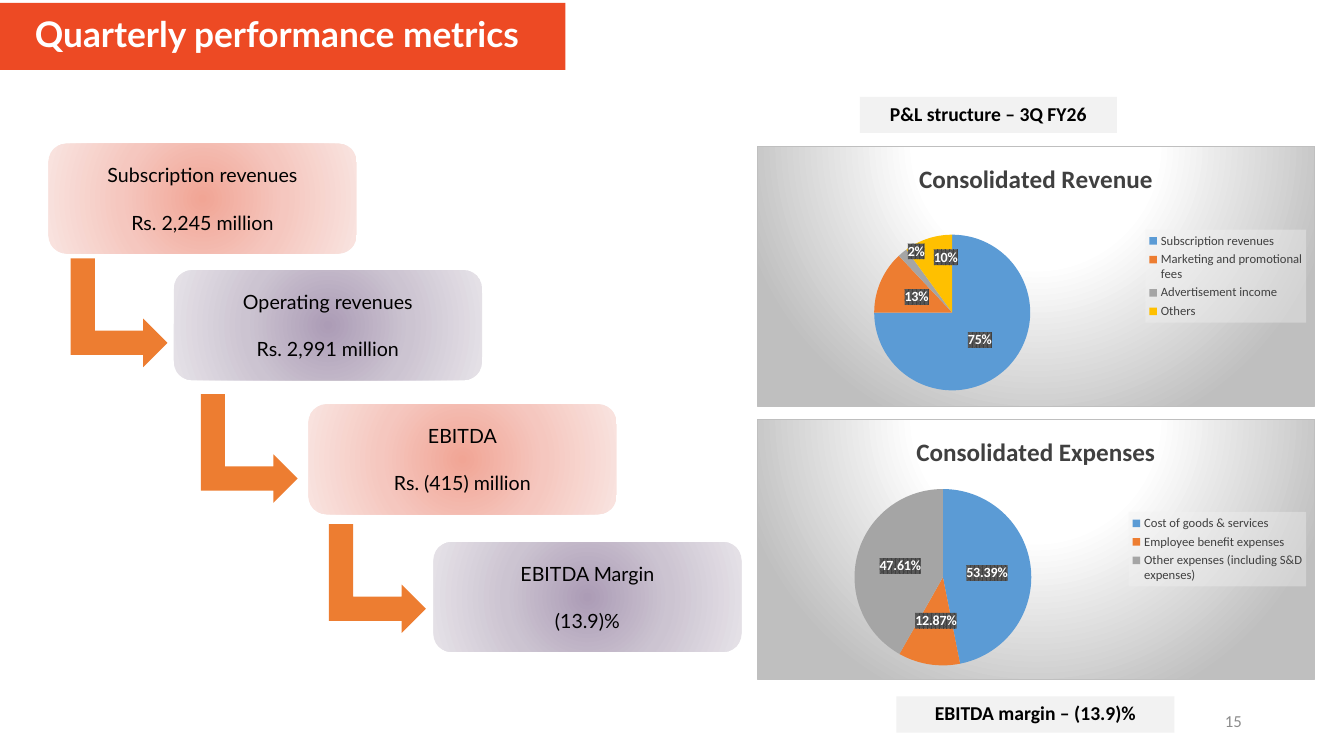
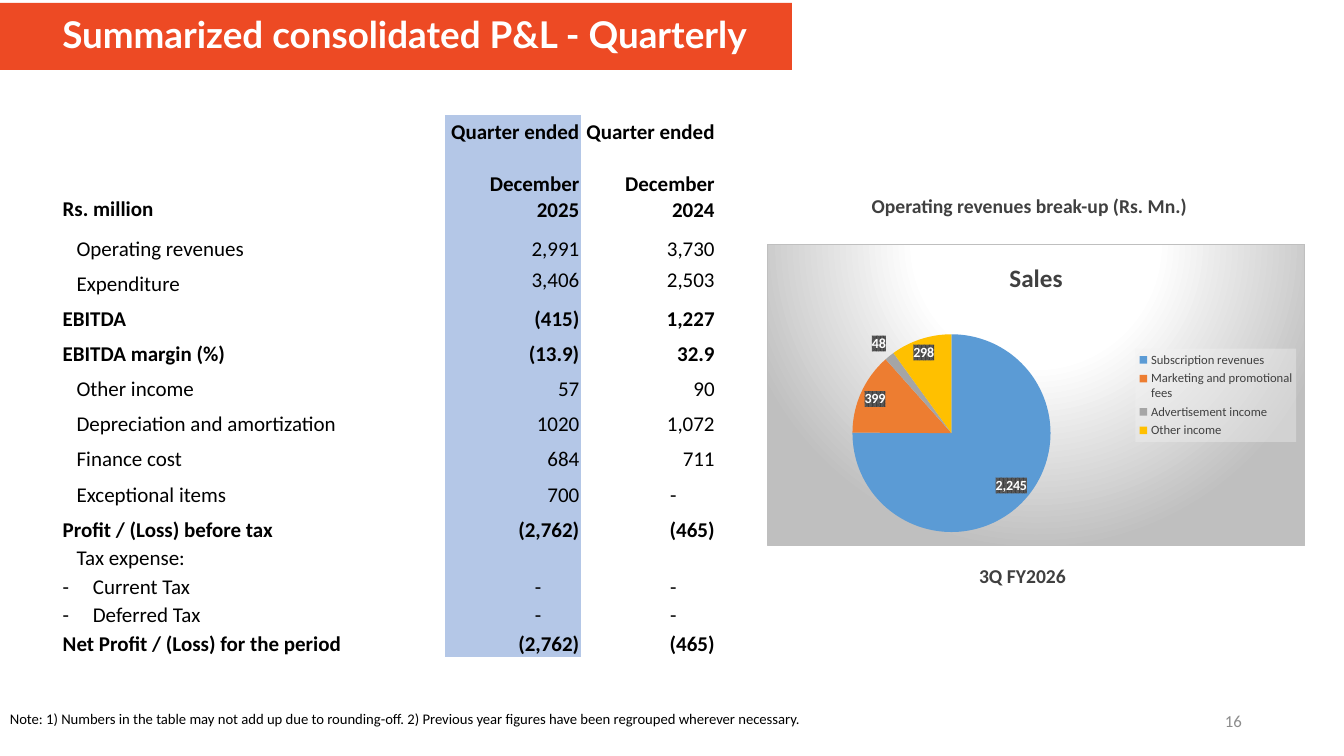
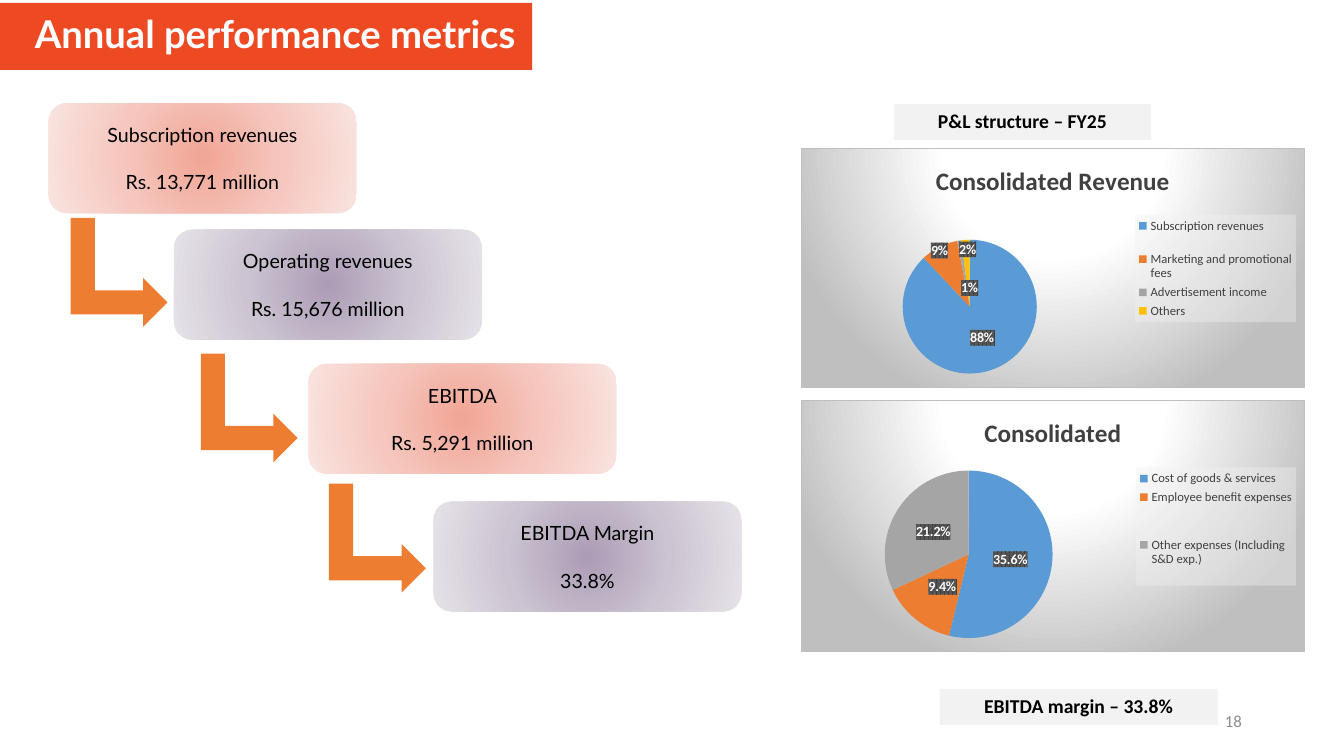
from copy import deepcopy

from lxml import etree
from pptx import Presentation
from pptx.chart.data import CategoryChartData
from pptx.dml.color import RGBColor
from pptx.enum.chart import XL_CHART_TYPE, XL_LABEL_POSITION, XL_LEGEND_POSITION
from pptx.enum.shapes import MSO_SHAPE
from pptx.enum.text import MSO_ANCHOR, MSO_AUTO_SIZE, PP_ALIGN
from pptx.oxml import parse_xml
from pptx.oxml.ns import nsdecls, qn
from pptx.util import Cm, Pt


class Theme:
    band = RGBColor.from_string("ED4A24")
    arrow = RGBColor.from_string("ED7D31")
    caption = RGBColor.from_string("F2F2F2")
    white = RGBColor.from_string("FFFFFF")
    highlight = RGBColor.from_string("B4C7E7")
    slices = [RGBColor.from_string(c) for c in ("5B9BD5", "ED7D31", "A5A5A5", "FFC000")]
    coral = [(0, "F1A595"), (50, "F5C7BF"), (100, "F9E4E0")]
    mauve = [(0, "AC9CB6"), (50, "CCC4D1"), (100, "E6E2E8")]
    backdrop = [(0, "FFFFFF"), (39, "FFFFFF"), (100, "BFBFBF")]
    black = RGBColor.from_string("000000")
    dark = RGBColor.from_string("404040")
    grey = RGBColor.from_string("8C8C8C")
    title = dict(name="Lato", bold=True, rgb=white)
    step = dict(name="Lato", size=Pt(14), rgb=black)
    caption_text = dict(name="Calibri", size=Pt(14), bold=True, rgb=black)
    heading = dict(name="Calibri", size=Pt(14), bold=True, rgb=dark)
    note = dict(name="Calibri", size=Pt(10.5), rgb=black)
    page = dict(name="Calibri", size=Pt(12), rgb=grey)
    table = dict(name="Calibri", size=Pt(15), rgb=black)
    chart = dict(name="Calibri", size=Pt(10), rgb=black)
    chart_title = dict(name="Calibri", size=Pt(18), bold=True, rgb=dark)
    legend = dict(name="Calibri", size=Pt(9), bold=False, rgb=dark)
    label = dict(name="Calibri", size=Pt(10), bold=True, rgb=white)


def set_font(font, style):
    for attribute, value in style.items():
        setattr(font.color if attribute == "rgb" else font, attribute, value)


def radial_fill(stops, top, bottom):
    marks = "".join(f'<a:gs pos="{position * 1000}"><a:srgbClr val="{color}"/></a:gs>'
                    for position, color in stops)
    return (f'<a:gradFill {nsdecls("a")} rotWithShape="1"><a:gsLst>{marks}</a:gsLst>'
            f'<a:path path="circle"><a:fillToRect l="50000" t="{top * 1000}" '
            f'r="50000" b="{bottom * 1000}"/></a:path></a:gradFill>')


# Content: lengths in centimetres; pie areas and label shifts are fractions of the chart
REVENUE = ["Subscription revenues", "Marketing and promotional\nfees",
           "Advertisement income", "Others"]
centre = XL_LABEL_POSITION.CENTER
band_caption = dict(style=Theme.caption_text, fill=Theme.caption, align=PP_ALIGN.CENTER,
                    anchor=MSO_ANCHOR.TOP, wrap=False)
plain_heading = dict(style=Theme.heading, fill=None, align=PP_ALIGN.CENTER,
                     anchor=MSO_ANCHOR.MIDDLE, wrap=True)
white_heading = {**plain_heading, "fill": Theme.white}
footnote = dict(style=Theme.note, fill=None, align=PP_ALIGN.LEFT,
                anchor=MSO_ANCHOR.TOP, wrap=True)
page_number = dict(style=Theme.page, fill=None, align=PP_ALIGN.RIGHT,
                   anchor=MSO_ANCHOR.MIDDLE, wrap=True)

deck = [
    dict(
        title="Quarterly performance metrics", band=14.25, size=25.2, align=PP_ALIGN.LEFT,
        inset=0.88, page="15",
        captions=[("EBITDA margin – (13.9)%", (22.59, 17.55, 7.01, 0.91), band_caption),
                  ("P&L structure – 3Q FY26", (21.67, 2.44, 6.48, 0.91), band_caption)],
        steps_top=3.62,
        steps=[("Subscription revenues", "Rs. 2,245 million"),
               ("Operating revenues", "Rs. 2,991 million"),
               ("EBITDA", "Rs. (415) million"), ("EBITDA Margin", "(13.9)%")],
        charts=[
            dict(title="Consolidated Revenue", at=(19.07, 3.67, 14.07, 6.58),
                 names=REVENUE, values=[75, 13, 2, 10], format="0%", position=centre,
                 area=(0.21, 0.34, 0.28, 0.6),
                 shifts={2: (-0.02, -0.12), 3: (0.01, -0.07)}),
            dict(title="Consolidated Expenses", at=(19.07, 10.55, 14.07, 6.58),
                 names=["Cost of goods & services", "Employee benefit expenses",
                        "Other expenses (including S&D expenses)"],
                 values=[0.5339, 0.1287, 0.4761], format="0.00%", position=centre,
                 area=None, shifts={}),
        ]),
    dict(
        title="Summarized consolidated P&L - Quarterly", band=19.96, size=26.3,
        align=PP_ALIGN.CENTER, inset=0.68, page="16",
        captions=[("Note: 1) Numbers in the table may not add up due to rounding-off. "
                   "2) Previous year figures have been regrouped wherever necessary.",
                   (0, 17.75, 31.12, 0.71), footnote),
                  ("Operating revenues break-up (Rs. Mn.)", (21.51, 4.6, 8.86, 1.19),
                   white_heading),
                  ("3Q FY2026", (23.93, 14.07, 3.68, 0.86), plain_heading)],
        steps_top=0, steps=[],
        charts=[
            dict(title="Sales", at=(19.33, 6.15, 13.56, 7.62),
                 names=["Subscription revenues", "Marketing and promotional fees",
                        "Advertisement income", "Other income"],
                 values=[2245, 399, 48, 298], format="#,##0", position=None,
                 area=None, shifts={}),
        ]),
    dict(
        title="Annual performance metrics", band=13.41, size=27.3, align=PP_ALIGN.LEFT,
        inset=0.88, page="18",
        captions=[("EBITDA margin – 33.8%", (23.68, 17.36, 7.01, 0.91), band_caption),
                  ("P&L structure – FY25", (22.53, 2.62, 6.48, 0.91), band_caption)],
        steps_top=2.6,
        steps=[("Subscription revenues", "Rs. 13,771 million"),
               ("Operating revenues", "Rs. 15,676 million"),
               ("EBITDA", "Rs. 5,291 million"), ("EBITDA Margin", "33.8%")],
        charts=[
            dict(title="Consolidated Revenue", at=(20.18, 3.74, 12.7, 6.05),
                 names=["Subscription revenues\n"] + REVENUE[1:],
                 values=[88, 9, 1, 2], format="0%", position=centre,
                 area=(0.2, 0.38, 0.27, 0.56),
                 shifts={1: (-0.03, -0.11), 2: (0.01, 0.06), 3: (0, -0.1)}),
            dict(title="Consolidated", at=(20.18, 10.09, 12.7, 6.35),
                 names=["Cost of goods & services", "Employee benefit expenses\n\n",
                        "Other expenses (Including S&D exp.)\n"],
                 values=[0.356, 0.094, 0.212], format="0.0%", position=centre,
                 area=None, shifts={}),
        ]),
]

# Left edge and drop of each step and of the arrow after it
step_places = [(1.22, 0), (4.38, 3.19), (7.77, 6.57), (10.92, 10.04)]
arrow_places = [(1.63, 3.04), (4.91, 6.46), (8.14, 9.74)]

presentation = Presentation()
presentation.slide_width, presentation.slide_height = Cm(33.87), Cm(19.05)
slides = []

for content in deck:
    slide = presentation.slides.add_slide(presentation.slide_layouts[5])
    slides.append(slide)

    # Title band
    title = slide.shapes.title
    title.left, title.top, title.width, title.height = (
        Cm(0), Cm(0.07), Cm(content["band"]), Cm(1.69))
    title.fill.solid()
    title.fill.fore_color.rgb = Theme.band
    frame = title.text_frame
    frame.text = content["title"]
    frame.auto_size = MSO_AUTO_SIZE.NONE
    frame.vertical_anchor = MSO_ANCHOR.MIDDLE
    frame.margin_left = Cm(content["inset"])
    frame.paragraphs[0].alignment = content["align"]
    frame.paragraphs[0].line_spacing = 0.9
    set_font(frame.paragraphs[0].runs[0].font, {**Theme.title, "size": Pt(content["size"])})

    # Captions and page number
    number = (content["page"], (23.93, 17.65, 7.62, 1.02), page_number)
    for words, place, look in content["captions"] + [number]:
        caption = slide.shapes.add_textbox(*map(Cm, place))
        if look["fill"] is not None:
            caption.fill.solid()
            caption.fill.fore_color.rgb = look["fill"]
        frame = caption.text_frame
        frame.text = words
        frame.word_wrap = look["wrap"]
        frame.vertical_anchor = look["anchor"]
        frame.paragraphs[0].alignment = look["align"]
        set_font(frame.paragraphs[0].runs[0].font, look["style"])

    # Cascade of steps
    for index, (measure, amount) in enumerate(content["steps"]):
        left, drop = step_places[index]
        step = slide.shapes.add_shape(MSO_SHAPE.ROUNDED_RECTANGLE, Cm(left),
                                      Cm(content["steps_top"] + drop), Cm(7.77), Cm(2.77))
        step.shadow.inherit = False
        stops = Theme.mauve if index % 2 else Theme.coral
        step.element.spPr.find(qn("a:prstGeom")).addnext(parse_xml(radial_fill(stops, 50, 50)))
        step.line.fill.background()
        frame = step.text_frame
        frame.text = f"{measure}\n{amount}"
        frame.vertical_anchor = MSO_ANCHOR.MIDDLE
        frame.paragraphs[1].space_before = Pt(17)
        for paragraph in frame.paragraphs:
            paragraph.alignment = PP_ALIGN.CENTER
            set_font(paragraph.runs[0].font, Theme.step)

    for left, drop in arrow_places if content["steps"] else []:
        arrow = slide.shapes.add_shape(MSO_SHAPE.BENT_UP_ARROW, Cm(left),
                                       Cm(content["steps_top"] + drop), Cm(2.74), Cm(2.44))
        arrow.rotation = 90
        arrow.shadow.inherit = False
        arrow.fill.solid()
        arrow.fill.fore_color.rgb = Theme.arrow
        arrow.line.fill.background()

    # Pie charts
    for pie in content["charts"]:
        data = CategoryChartData()
        data.categories = pie["names"]
        data.add_series(pie["title"], pie["values"])
        chart = slide.shapes.add_chart(XL_CHART_TYPE.PIE, *map(Cm, pie["at"]), data).chart
        set_font(chart.font, Theme.chart)
        chart.has_title = True
        chart.chart_title.text_frame.text = pie["title"]
        set_font(chart.chart_title.text_frame.paragraphs[0].runs[0].font, Theme.chart_title)
        chart.has_legend = True
        chart.legend.position = XL_LEGEND_POSITION.RIGHT
        chart.legend.include_in_layout = False
        set_font(chart.legend.font, Theme.legend)

        plot = chart.plots[0]
        plot.vary_by_categories = True
        series = plot.series[0]
        for index in range(len(pie["values"])):
            wedge = series.points[index].format
            wedge.fill.solid()
            wedge.fill.fore_color.rgb = Theme.slices[index]

        labels = series.data_labels
        labels.show_percentage = pie["format"] == "0%"
        labels.show_value = not labels.show_percentage
        labels.number_format = pie["format"]
        labels.number_format_is_linked = False
        if pie["position"] is not None:
            labels.position = pie["position"]
        set_font(labels.font, Theme.label)

        # Fixed place of the pie
        if pie["area"]:
            sides = "".join(f'<c:{side} val="{value}"/>'
                            for side, value in zip("xywh", pie["area"]))
            plot_area = next(chart.element.iter(qn("c:plotArea")))
            for automatic in plot_area.findall(qn("c:layout")):
                plot_area.remove(automatic)
            plot_area.insert(0, parse_xml(
                f'<c:layout {nsdecls("c")}><c:manualLayout><c:layoutTarget val="inner"/>'
                f'<c:xMode val="edge"/><c:yMode val="edge"/>{sides}'
                f'</c:manualLayout></c:layout>'))

        # Fills behind the chart, its legend and its labels
        label_group = series.data_labels._element
        backgrounds = [
            (chart.element, radial_fill(Theme.backdrop, -80, 180)
             + '<a:ln w="9525"><a:solidFill><a:srgbClr val="BFBFBF"/></a:solidFill></a:ln>'),
            (chart.legend._element, '<a:solidFill><a:srgbClr val="F2F2F2">'
             '<a:alpha val="39000"/></a:srgbClr></a:solidFill>'),
            (label_group, '<a:pattFill prst="pct75"><a:fgClr><a:srgbClr val="404040"/></a:fgClr>'
             '<a:bgClr><a:srgbClr val="595959"/></a:bgClr></a:pattFill>'),
        ]
        for part, fill in backgrounds:
            part.find(qn("c:txPr")).addprevious(
                parse_xml(f'<c:spPr {nsdecls("c", "a")}>{fill}</c:spPr>'))

        # Labels moved off crowded slices
        shared = [child for child in label_group if child.tag != qn("c:showLeaderLines")]
        for order, (index, (x, y)) in enumerate(pie["shifts"].items()):
            moved = parse_xml(
                f'<c:dLbl {nsdecls("c")}><c:idx val="{index}"/><c:layout><c:manualLayout>'
                f'<c:x val="{x}"/><c:y val="{y}"/></c:manualLayout></c:layout></c:dLbl>')
            moved.extend(deepcopy(shared))
            label_group.insert(order, moved)

# Profit and loss table: label, kind of row, two quarters
rows = [
    ("", "head", "Quarter ended", "Quarter ended"),
    ("Rs. million", "head", "December 2025", "December 2024"),
    ("Operating revenues", "item", "2,991", "3,730"),
    ("Expenditure", "item", "3,406", "2,503"),
    ("EBITDA", "total", "(415)", "1,227"),
    ("EBITDA margin (%)", "total", "(13.9)", "32.9"),
    ("Other income", "item", "57", "90"),
    ("Depreciation and amortization", "item", "1020", "1,072"),
    ("Finance cost", "item", "684", "711"),
    ("Exceptional items", "item", "700", "-"),
    ("Profit / (Loss) before tax", "total", "(2,762)", "(465)"),
    ("Tax expense:", "item", "", ""),
    ("Current Tax", "dash", "-", "-"),
    ("Deferred Tax", "dash", "-", "-"),
    ("Net Profit / (Loss) for the period", "total", "(2,762)", "(465)"),
]
heights = [1.4, 1.3, 1] + [0.885] * 8 + [0.72] * 4
widths = [9.39, 0.28, 3.41, 3.41]
table_frame = slides[1].shapes.add_table(len(rows), len(widths), Cm(1.55), Cm(2.9),
                                         Cm(sum(widths)), Cm(sum(heights)))
for style_id in table_frame.element.iter(qn("a:tableStyleId")):
    style_id.text = "{2D5ABB26-0587-4C30-8999-92F81FD0307C}"
statement = table_frame.table
statement.first_row = statement.horz_banding = False
for column, width in zip(statement.columns, widths):
    column.width = Cm(width)

for r, (label, kind, current, previous) in enumerate(rows):
    statement.rows[r].height = Cm(heights[r])
    for c, words in enumerate((label, "", current, previous)):
        cell = statement.cell(r, c)
        cell.margin_left = cell.margin_right = cell.margin_top = Cm(0.03)
        cell.margin_bottom = Cm(0.64) if r == 0 and words else Cm(0)
        cell.vertical_anchor = MSO_ANCHOR.BOTTOM
        if c == 2:
            cell.fill.solid()
            cell.fill.fore_color.rgb = Theme.highlight
        else:
            cell.fill.background()
        paragraph = cell.text_frame.paragraphs[0]
        if not words:
            etree.SubElement(paragraph._p, qn("a:endParaRPr"), sz="1500")
            continue
        if c == 0 and kind == "item":
            cell.margin_left = Cm(0.38)
        elif c == 0 and kind == "dash":
            properties = paragraph._p.get_or_add_pPr()
            properties.set("marL", str(Cm(0.76)))
            properties.set("indent", str(-Cm(0.76)))
            etree.SubElement(properties, qn("a:buFont"), typeface="Calibri")
            etree.SubElement(properties, qn("a:buChar"), char="-")
        elif c > 1:
            paragraph.alignment = PP_ALIGN.RIGHT
            if words == "-":
                paragraph.alignment = PP_ALIGN.CENTER
                cell.margin_left = Cm(1.3)
            if label == "Expenditure":
                cell.vertical_anchor = MSO_ANCHOR.MIDDLE
        run = paragraph.add_run()
        run.text = words
        set_font(run.font, {**Theme.table, "bold": kind in ("head", "total")})

presentation.save("out.pptx")
